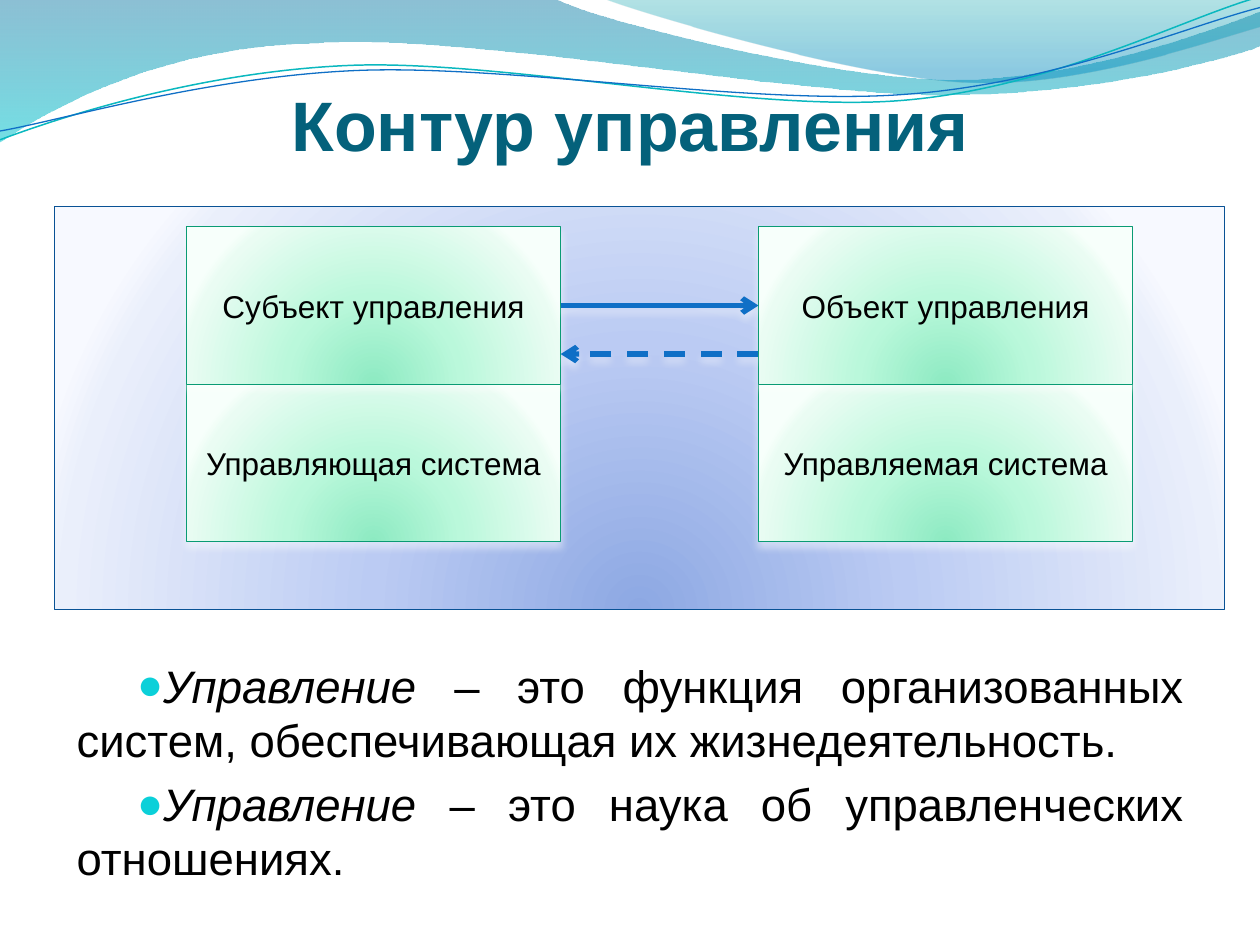
from lxml import etree
from pptx import Presentation
from pptx.dml.color import RGBColor
from pptx.enum import dml, shapes, text
from pptx.oxml import parse_xml
from pptx.oxml.ns import nsdecls, qn
from pptx.util import Inches, Pt

BLACK = RGBColor(0x00, 0x00, 0x00)
TITLE = RGBColor(0x04, 0x61, 0x7B)
BULLET = RGBColor(0x0B, 0xD0, 0xD9)
BLUE = RGBColor(0x0F, 0x6F, 0xC6)
TEAL = RGBColor(0x0A, 0xB8, 0xBF)
PANEL_LINE = RGBColor(0x09, 0x52, 0x95)
BOX_LINE = RGBColor(0x0A, 0x9B, 0x74)
GLOW = RGBColor(0xFF, 0xFF, 0xFF)
WAVE_STOPS = [(0, RGBColor(0x00, 0x74, 0xA1), 45), (100, RGBColor(0x00, 0xC6, 0xCF), 55)]
CREST_STOPS = [(0, RGBColor(0x00, 0xA1, 0xA9), 30), (80, RGBColor(0x00, 0x8B, 0xBF), 45)]
BOX_STOPS = [(0, RGBColor(0x8D, 0xEA, 0xC2), 100), (43, RGBColor(0xBA, 0xF8, 0xDB), 100),
             (93, RGBColor(0xEA, 0xFC, 0xF3), 100), (100, RGBColor(0xF7, 0xFF, 0xFB), 100)]
PANEL_STOPS = [(0, RGBColor(0x8D, 0xA8, 0xE3), 100), (43, RGBColor(0xBB, 0xCB, 0xF3), 100),
               (93, RGBColor(0xEA, 0xEF, 0xFB), 100), (100, RGBColor(0xF7, 0xF9, 0xFF), 100)]
DOWNWARD = '<a:lin ang="5400000" scaled="1"/>'
FROM_BELOW = ('<a:path path="circle"><a:fillToRect l="50000" t="130000" r="50000" '
              'b="-30000"/></a:path>')


def set_gradient(shape, stops, direction):
    """Fill with (position %, colour, opacity %) stops."""
    shape.fill.gradient()
    old = shape._element.spPr.find(qn("a:gradFill"))
    stop_xml = "".join(
        f'<a:gs pos="{pos * 1000}"><a:srgbClr val="{color}">'
        f'<a:alpha val="{opacity * 1000}"/></a:srgbClr></a:gs>'
        for pos, color, opacity in stops)
    new = parse_xml(f'<a:gradFill {nsdecls("a")} rotWithShape="1">'
                    f'<a:gsLst>{stop_xml}</a:gsLst>{direction}</a:gradFill>')
    old.getparent().replace(old, new)


def add_glow(shape):
    """Add a soft light shadow just below the shape."""
    effects = etree.SubElement(shape._element.spPr, qn("a:effectLst"))
    effects.append(parse_xml(
        f'<a:outerShdw {nsdecls("a")} blurRad="{Pt(4.5)}" dist="{Pt(3)}" dir="5400000" '
        f'rotWithShape="0"><a:srgbClr val="{GLOW}"><a:alpha val="48000"/></a:srgbClr>'
        '</a:outerShdw>'))


def set_line(shape, color, width):
    shape.line.color.rgb = color
    shape.line.width = Pt(width)


def add_outline(page, start, segments, close):
    """Draw line ends (2 numbers) and cubic curves (6 numbers) from the start."""
    points = [(Inches(x), Inches(y)) for segment in segments
              for x, y in zip(segment[::2], segment[1::2])]
    builder = page.shapes.build_freeform(Inches(start[0]), Inches(start[1]), scale=1.0)
    builder.add_line_segments(points, close=close)
    outline = builder.convert_to_shape()
    outline.shadow.inherit = False
    lines = iter(list(outline._element.spPr.iter(qn("a:lnTo"))))
    for segment in segments:
        line = next(lines)
        if len(segment) == 6:
            line.tag = qn("a:cubicBezTo")
            for _ in range(2):
                extra = next(lines)
                line.append(extra[0])
                extra.getparent().remove(extra)
    return outline


def add_waves(page):
    bands = [
        ((0, 0), [(4.4, -0.01), (4.76, 0.17, 6.64, 0.63, 7.58, 0.63),
                  (8.53, 0.63, 9.58, 0.26, 10, 0.09), (10.01, 0.36),
                  (9.83, 0.44, 8.7, 0.76, 7.46, 0.75), (6.22, 0.75, 3.82, 0.28, 2.57, 0.34),
                  (1.29, 0.36, 0.46, 0.83, -0.01, 1.13)], WAVE_STOPS),
        ((4.79, -0.01), [(5.09, 0.11, 6.82, 0.62, 7.69, 0.65),
                         (8.56, 0.69, 9.61, 0.32, 10, 0.21), (10, 0)], CREST_STOPS),
    ]
    for start, segments, stops in bands:
        band = add_outline(page, start, segments, True)
        set_gradient(band, stops, DOWNWARD)
        band.line.fill.background()
    strands = [
        ((0, 1.11), [(0.48, 0.93, 1.58, 0.57, 2.77, 0.52), (3.95, 0.47, 5.93, 0.89, 7.13, 0.8),
                     (8.33, 0.71, 9.38, 0.15, 9.98, -0.02)], TEAL, 0.85),
        ((0, 1.04), [(0.47, 0.96, 1.64, 0.61, 2.83, 0.56), (4.03, 0.51, 5.97, 0.84, 7.17, 0.75),
                     (8.36, 0.67, 9.41, 0.21, 10, 0.06)], BLUE, 0.75),
    ]
    for start, segments, color, width in strands:
        strand = add_outline(page, start, segments, False)
        strand.fill.background()
        set_line(strand, color, width)


def set_font(para, size, color):
    para.font.name = "Arial"
    para.font.size = Pt(size)
    para.font.color.rgb = color


def add_title(page, left, top, width, height):
    frame = page.shapes.add_textbox(left, top, width, height).text_frame
    frame.word_wrap = True
    frame.vertical_anchor = text.MSO_ANCHOR.BOTTOM
    frame.margin_left = frame.margin_right = frame.margin_bottom = 0
    para = frame.paragraphs[0]
    para.text = "Контур управления"
    para.alignment = text.PP_ALIGN.CENTER
    set_font(para, 40, TITLE)
    para.font.bold = True


def add_definitions(page, left, top, width, height):
    frame = page.shapes.add_textbox(left, top, width, height).text_frame
    frame.word_wrap = True
    definitions = [" – это функция организованных систем, обеспечивающая их жизнедеятельность.",
                   " – это наука об управленческих отношениях."]
    for index, definition in enumerate(definitions):
        para = frame.add_paragraph() if index else frame.paragraphs[0]
        para.alignment = text.PP_ALIGN.JUSTIFY
        para.space_before = Pt(5.2)
        set_font(para, 26, BLACK)
        term = para.add_run()
        term.text = "Управление"
        term.font.italic = True
        para.add_run().text = definition
        props = para._p.get_or_add_pPr()
        props.set("marL", str(Inches(0.01)))
        props.set("indent", str(Inches(0.48)))
        bullet = parse_xml(
            f'<a:pPr {nsdecls("a")}><a:buClr><a:srgbClr val="{BULLET}"/></a:buClr>'
            '<a:buSzPct val="95000"/><a:buFont typeface="Arial"/><a:buChar char="●"/></a:pPr>')
        place = props.index(props.find(qn("a:defRPr")))
        props[place:place] = list(bullet)


def add_block(page, left, top, width, height, stops, line, label=""):
    block = page.shapes.add_shape(shapes.MSO_SHAPE.RECTANGLE, left, top, width, height)
    set_gradient(block, stops, FROM_BELOW)
    set_line(block, line, 0.75)
    add_glow(block)
    if label:
        block.text_frame.word_wrap = True
        block.text_frame.vertical_anchor = text.MSO_ANCHOR.MIDDLE
        para = block.text_frame.paragraphs[0]
        para.text = label
        para.alignment = text.PP_ALIGN.CENTER
        set_font(para, 18, BLACK)
    return block


def add_arrow(page, x1, x2, y):
    arrow = page.shapes.add_connector(shapes.MSO_CONNECTOR.STRAIGHT, x1, y, x2, y)
    set_line(arrow, BLUE, 3)
    add_glow(arrow)
    return arrow


def add_arrowhead(arrow):
    etree.SubElement(arrow.line._get_or_add_ln(), qn("a:tailEnd"), type="arrow")


def add_control_loop(page, left, top, width, height):
    add_block(page, left, top, width, height, PANEL_STOPS, PANEL_LINE)
    box_width, box_height = Inches(2.97), Inches(1.25)
    first_top = top + Inches(0.16)
    columns = [(left + Inches(1.05), ["Субъект управления", "Управляющая система"]),
               (left + Inches(5.59), ["Объект управления", "Управляемая система"])]
    heads = []
    for x, labels in columns:
        # The lower box goes first so that the upper one lies over its edge.
        for row in (1, 0):
            box = add_block(page, x, first_top + row * box_height, box_width, box_height,
                            BOX_STOPS, BOX_LINE, labels[row])
        heads.append(box)
    subject, target = heads
    start, end = subject.left + box_width, target.left
    command = add_arrow(page, start, end, first_top + box_height // 2)
    command.begin_connect(subject, 3)
    command.end_connect(target, 1)
    feedback = add_arrow(page, end, start, first_top + Inches(1.01))
    feedback.line.dash_style = dml.MSO_LINE.DASH
    for arrow in (command, feedback):
        add_arrowhead(arrow)


def main():
    deck = Presentation()
    deck.slide_width, deck.slide_height = Inches(10), Inches(7.5)
    page = deck.slides.add_slide(deck.slide_layouts[6])
    add_waves(page)
    add_title(page, Inches(0.5), Inches(0.52), Inches(9), Inches(0.79))
    add_definitions(page, Inches(0.5), Inches(5.17), Inches(9), Inches(2.1))
    add_control_loop(page, Inches(0.43), Inches(1.64), Inches(9.29), Inches(3.2))
    deck.save("out.pptx")


if __name__ == "__main__":
    main()
